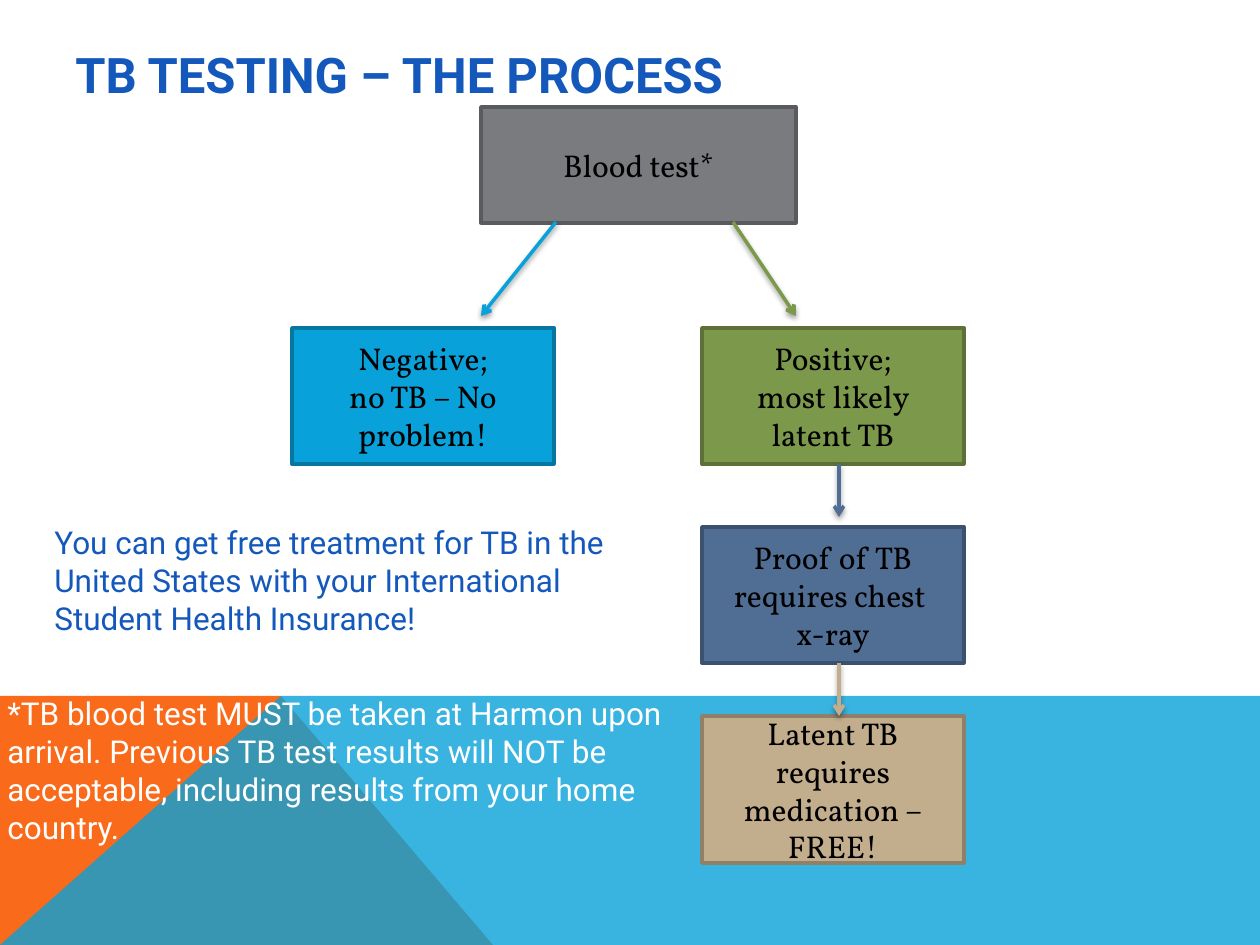
from lxml import etree
from pptx import Presentation
from pptx.dml.color import RGBColor
from pptx.enum.shapes import MSO_CONNECTOR, MSO_SHAPE
from pptx.enum.text import MSO_ANCHOR, PP_ALIGN
from pptx.oxml.ns import qn
from pptx.util import Emu, Pt

PX = 914400 / 126
RECTANGLE = MSO_SHAPE.RECTANGLE
STRAIGHT = MSO_CONNECTOR.STRAIGHT
CENTER, LEFT = PP_ALIGN.CENTER, PP_ALIGN.LEFT
MIDDLE, TOP = MSO_ANCHOR.MIDDLE, MSO_ANCHOR.TOP

BLUE, ORANGE, GREEN, NAVY, TAN = "08A1D9", "F96A1B", "7C984A", "506E94", "C2AD8D"
GRAY, TITLE_BLUE, WHITE, BLACK = "797B7E", "1458BC", "FFFFFF", "000000"


def px(length):
    return Emu(round(length * PX))


def color(value):
    return RGBColor.from_string(value)


def add_child(parent, tag, **attributes):
    child = etree.SubElement(parent, qn(tag))
    for name, value in attributes.items():
        child.set(name, str(value))
    return child


def write_text(frame, text, *, font, size=18, fill=BLACK, bold=False, align=LEFT, anchor=TOP):
    """Fill a text frame, one paragraph for each line of text."""
    frame.word_wrap = True
    frame.vertical_anchor = anchor
    for index, line in enumerate(text.split("\n")):
        paragraph = frame.add_paragraph() if index else frame.paragraphs[0]
        paragraph.alignment = align
        run = paragraph.add_run()
        run.text = line
        run.font.name = font
        run.font.size = Pt(size)
        run.font.bold = bold
        run.font.color.rgb = color(fill)


class ProcessSlide:
    sans = "Roboto"
    serif = "Vollkorn"
    line_width = Pt(2)

    def __init__(self, slide):
        self.shapes = slide.shapes

    def polygon(self, points, fill, opacity=100):
        corners = [(px(x), px(y)) for x, y in points]
        builder = self.shapes.build_freeform(*corners[0])
        builder.add_line_segments(corners[1:], close=True)
        shape = builder.convert_to_shape()
        shape.shadow.inherit = False
        shape.fill.solid()
        shape.fill.fore_color.rgb = color(fill)
        shape.line.fill.background()
        if opacity < 100:
            fill_color = shape.element.spPr.find(".//" + qn("a:srgbClr"))
            add_child(fill_color, "a:alpha", val=opacity * 1000)

    def text(self, text, left, top, width, height, **style):
        box = self.shapes.add_textbox(px(left), px(top), px(width), px(height))
        write_text(box.text_frame, text, font=self.sans, **style)

    def step(self, text, left, top, width, height, fill, border):
        shape = self.shapes.add_shape(RECTANGLE, px(left), px(top), px(width), px(height))
        shape.shadow.inherit = False
        shape.fill.solid()
        shape.fill.fore_color.rgb = color(fill)
        shape.line.color.rgb = color(border)
        shape.line.width = self.line_width
        write_text(shape.text_frame, text, font=self.serif, align=CENTER, anchor=MIDDLE)

    def arrow(self, start, end, fill):
        """Draw a connector with an open arrowhead and a soft shadow below."""
        connector = self.shapes.add_connector(STRAIGHT, *map(px, start + end))
        connector.line.color.rgb = color(fill)
        connector.line.width = self.line_width
        add_child(connector.line._get_or_add_ln(), "a:tailEnd", type="arrow")
        effects = add_child(connector.element.spPr, "a:effectLst")
        shadow = add_child(effects, "a:outerShdw", blurRad=Pt(3.1), dist=Pt(1.6),
                           dir=90 * 60000, rotWithShape=0)
        add_child(add_child(shadow, "a:srgbClr", val=BLACK), "a:alpha", val=38000)


def main():
    presentation = Presentation()
    presentation.slide_width, presentation.slide_height = px(1260), px(945)
    slide = ProcessSlide(presentation.slides.add_slide(presentation.slide_layouts[6]))

    band_top, bottom, peak = 696, 945, 281
    slide.polygon([(0, bottom), (0, band_top), (peak, band_top), (493, bottom)], ORANGE)
    slide.polygon([(0, bottom), (peak, band_top), (1260, band_top), (1260, bottom)],
                  BLUE, opacity=80)

    slide.text("TB TESTING – THE PROCESS", 63, 38, 1134, 158,
               size=28, fill=TITLE_BLUE, bold=True)

    step_width, step_height = 262, 136
    negative_left, positive_left = 292, 702
    result_top, proof_top, medication_top = 328, 527, 716
    down_x, down_length = 839, 53

    slide.step("Blood test*", 481, 107, 315, 116, GRAY, "5A5B5D")
    slide.arrow((556, 222), (481, 316), BLUE)
    slide.arrow((733, 222), (796, 316), GREEN)
    slide.step("Negative;\nno TB – No problem!", negative_left, result_top,
               step_width, step_height, BLUE, "0677A1")
    slide.step("Positive;\nmost likely latent TB", positive_left, result_top,
               step_width, step_height, GREEN, "5C7037")
    slide.step("Proof of TB requires chest \nx-ray", positive_left, proof_top,
               step_width, step_height, NAVY, "3B516D")
    slide.step("Latent TB requires medication – FREE!", positive_left, medication_top,
               step_width, 147, TAN, "908068")
    for step_top, fill in ((result_top, NAVY), (proof_top, TAN)):
        start_y = step_top + step_height
        slide.arrow((down_x, start_y), (down_x, start_y + down_length), fill)

    slide.text("You can get free treatment for TB in the United States with your "
               "International Student Health Insurance!", 42, 517, 577, 127, fill=TITLE_BLUE)
    slide.text("*TB blood test MUST be taken at Harmon upon arrival. Previous TB test "
               "results will NOT be acceptable, including results from your home country.",
               -5, 688, 756, 127, fill=WHITE)

    presentation.save("out.pptx")


if __name__ == "__main__":
    main()
